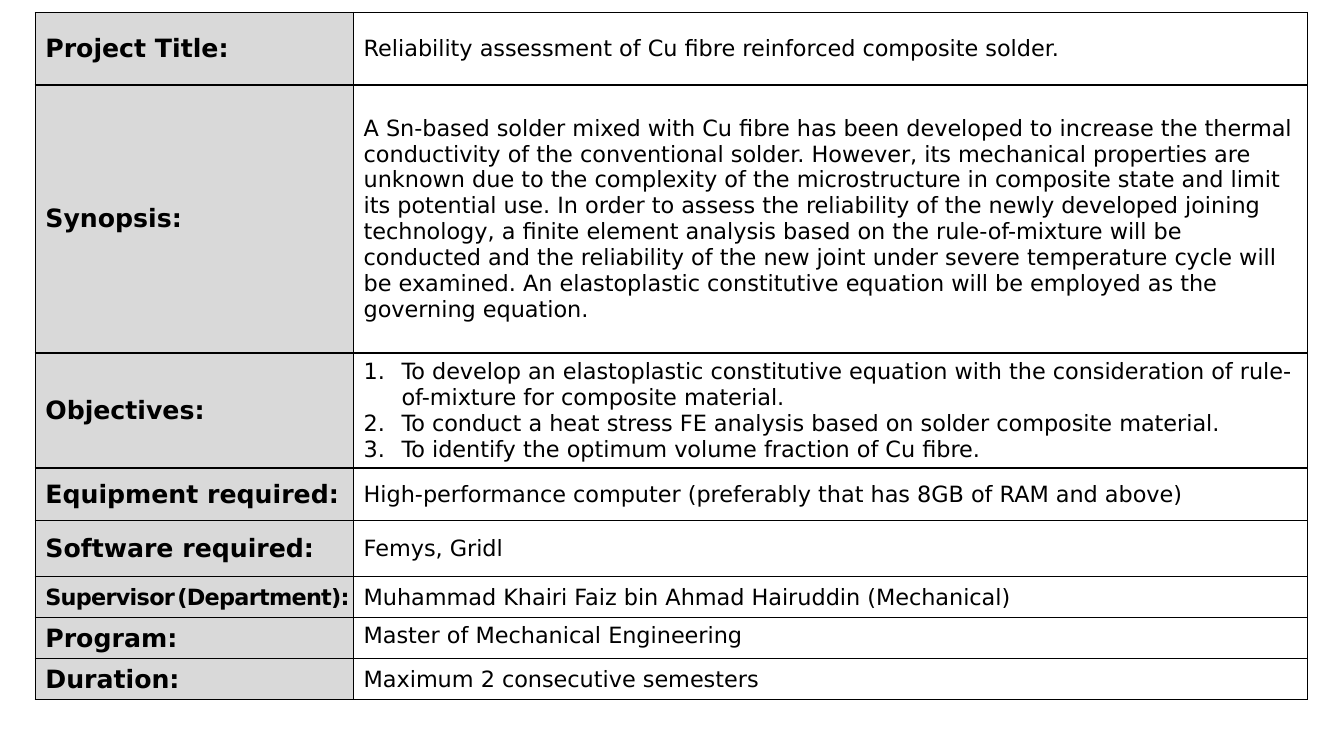
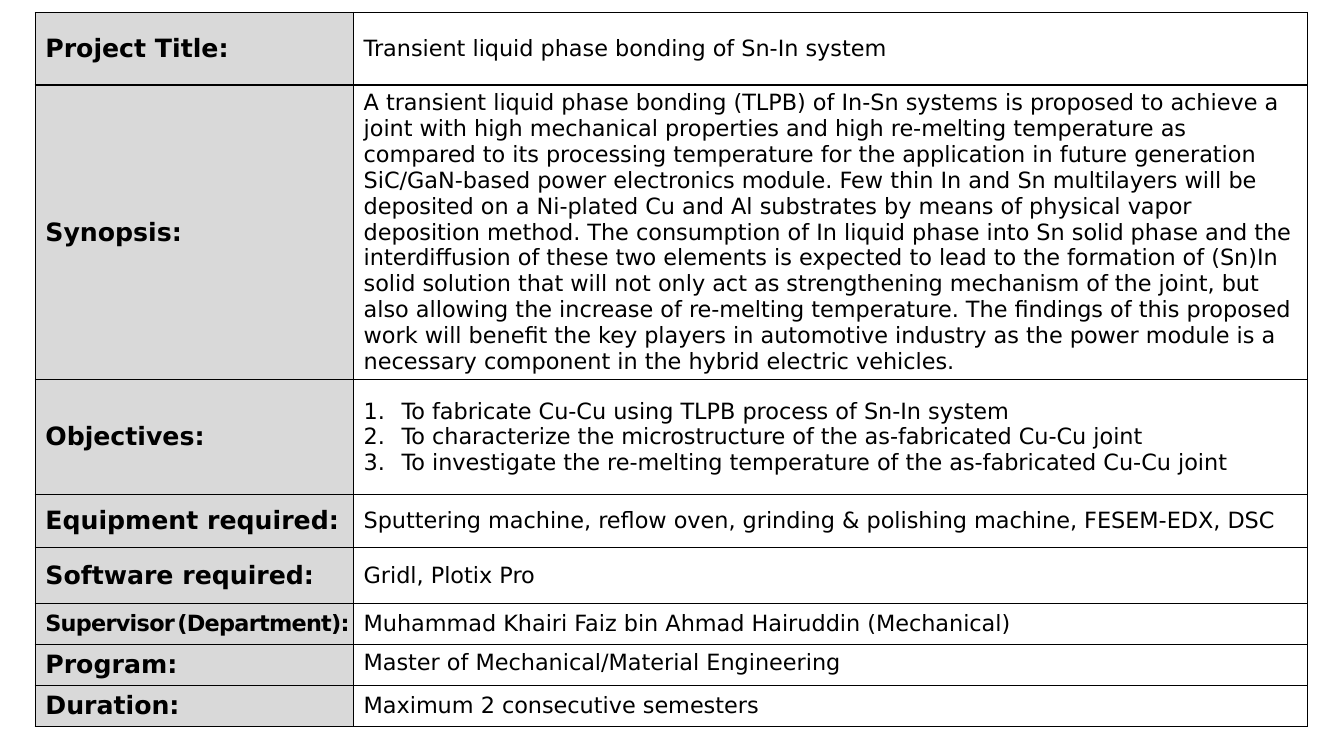
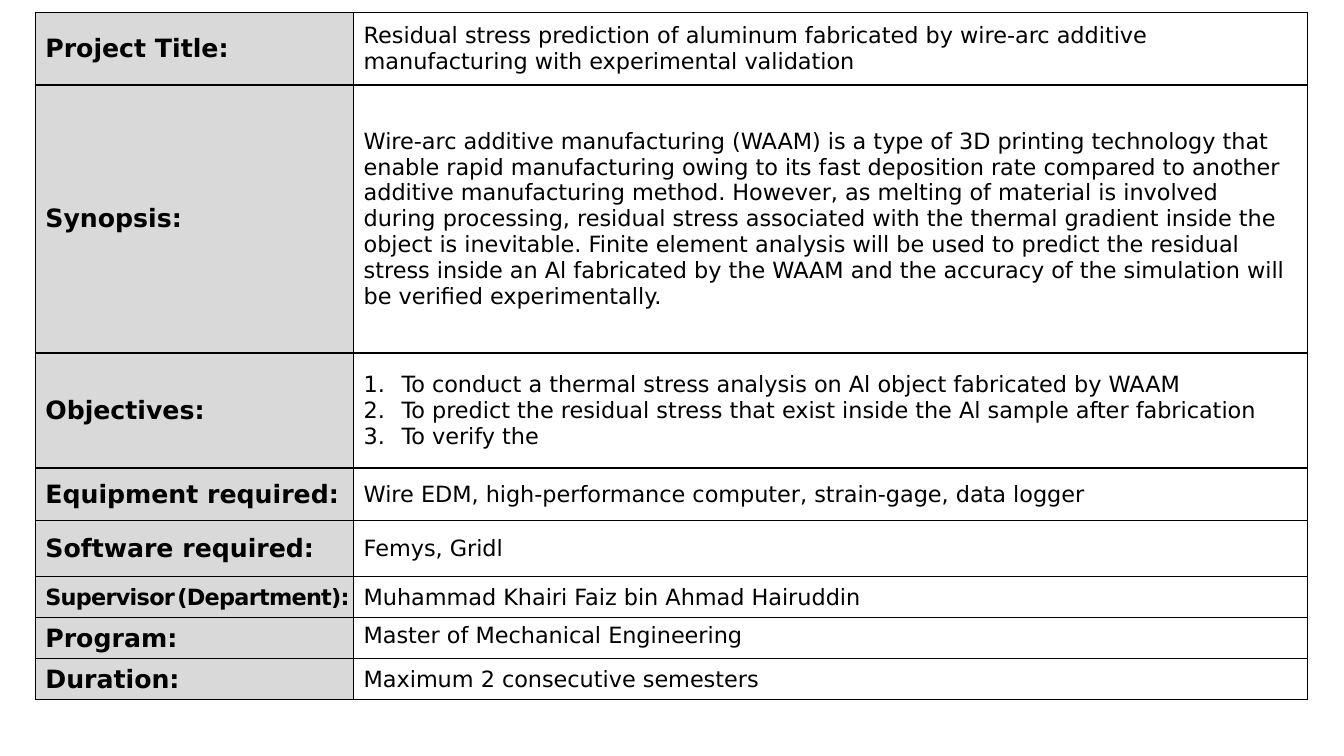
import lxml.etree
import pptx
import pptx.dml.color
import pptx.enum.text
import pptx.oxml.ns
import pptx.util

Pt = pptx.util.Pt
qn = pptx.oxml.ns.qn
RGB = pptx.dml.color.RGBColor.from_string
ANCHOR = pptx.enum.text.MSO_ANCHOR

THEME = {
    "font": "DejaVu Sans",
    "ink": "000000",
    "label_fill": "D9D9D9",
    "paper": "FFFFFF",
    "label_size": 18,
    "body_size": 16,
    "gap_size": 5,
    "rule": 1,
}

SLIDE_SIZE = (960, 540)
TABLE_ORIGIN = (25.2, 8.9)
COLUMN_WIDTHS = (227.4, 681.2)
LIST_INDENT = 27

FIELDS = [
    ("Project Title:", 51.8),
    ("Synopsis:", 191.5),
    ("Objectives:", 82.1),
    ("Equipment required:", 37.8),
    ("Software required:", 40),
    (("Supervisor", " ", "(Department):"), 29.3),
    ("Program:", 29.3),
    ("Duration:", 29.3),
]
TOP_ANCHORED = "Program:"

PROJECTS = [
    [
        "Reliability assessment of Cu fibre reinforced composite solder.",
        (
            "A Sn-based solder mixed with Cu fibre has been developed to increase the thermal "
            "conductivity of the conventional solder.",
            "However, its mechanical properties are unknown due to the complexity of the "
            "microstructure in composite state and limit its potential use.",
            "In order to assess the reliability of the newly developed joining technology, a "
            "finite element analysis based on the rule-of-mixture will be conducted and the "
            "reliability of the new joint under severe temperature cycle will be examined.",
            "An elastoplastic constitutive equation will be employed as the governing equation.",
        ),
        [
            "To develop an elastoplastic constitutive equation with the consideration of "
            "rule-of-mixture for composite material.",
            "To conduct a heat stress FE analysis based on solder composite material.",
            "To identify the optimum volume fraction of Cu fibre.",
        ],
        "High-performance computer (preferably that has 8GB of RAM and above)",
        "Femys, Gridl",
        "Muhammad Khairi Faiz bin Ahmad Hairuddin (Mechanical)",
        "Master of Mechanical Engineering",
        "Maximum 2 consecutive semesters",
    ],
    [
        "Transient liquid phase bonding of Sn-In system",
        (
            "A transient liquid phase bonding (TLPB) of In-Sn systems is proposed to achieve a "
            "joint with high mechanical properties and high re-melting temperature as "
            "compared to its processing temperature for the application in future generation "
            "SiC/GaN-based power electronics module.",
            "Few thin In and Sn multilayers will be deposited on a Ni-plated Cu and Al "
            "substrates by means of physical vapor deposition method.",
            "The consumption of In liquid phase into Sn solid phase and the interdiffusion of "
            "these two elements is expected to lead to the formation of (Sn)In solid solution "
            "that will not only act as strengthening mechanism of the joint, but also allowing "
            "the increase of re-melting temperature.",
            "The findings of this proposed work will benefit the key players in automotive "
            "industry as the power module is a necessary component in the hybrid electric "
            "vehicles.",
        ),
        [
            "To fabricate Cu-Cu using TLPB process of Sn-In system",
            "To characterize the microstructure of the as-fabricated Cu-Cu joint",
            "To investigate the re-melting temperature of the as-fabricated Cu-Cu joint",
        ],
        "Sputtering machine, reflow oven, grinding & polishing machine, FESEM-EDX, DSC",
        "Gridl, Plotix Pro",
        "Muhammad Khairi Faiz bin Ahmad Hairuddin (Mechanical)",
        "Master of Mechanical/Material Engineering",
        "Maximum 2 consecutive semesters",
    ],
    [
        "Residual stress prediction of aluminum fabricated by wire-arc additive "
        "manufacturing with experimental validation",
        (
            "Wire-arc additive manufacturing (WAAM) is a type of 3D printing technology that "
            "enable rapid manufacturing owing to its fast deposition rate compared to another "
            "additive manufacturing method.",
            "However, as melting of material is involved during processing, residual stress "
            "associated with the thermal gradient inside the object is inevitable.",
            "Finite element analysis will be used to predict the residual stress inside an Al "
            "fabricated by the WAAM and the accuracy of the simulation will be verified "
            "experimentally.",
        ),
        [
            "To conduct a thermal stress analysis on Al object fabricated by WAAM",
            "To predict the residual stress that exist inside the Al sample after fabrication",
            "To verify the",
        ],
        "Wire EDM, high-performance computer, strain-gage, data logger",
        "Femys, Gridl",
        "Muhammad Khairi Faiz bin Ahmad Hairuddin",
        "Master of Mechanical Engineering",
        "Maximum 2 consecutive semesters",
    ],
]


def style_run(run, size, bold):
    run.font.name = THEME["font"]
    run.font.size = Pt(size)
    run.font.bold = bold
    run.font.color.rgb = RGB(THEME["ink"])


def frame_cell(cell, fill):
    properties = cell._tc.get_or_add_tcPr()
    for side in ("a:lnL", "a:lnR", "a:lnT", "a:lnB"):
        border = lxml.etree.SubElement(properties, qn(side), w=str(Pt(THEME["rule"])))
        ink = lxml.etree.SubElement(border, qn("a:solidFill"))
        lxml.etree.SubElement(ink, qn("a:srgbClr"), val=THEME["ink"])
    cell.fill.solid()
    cell.fill.fore_color.rgb = RGB(fill)
    cell.vertical_anchor = ANCHOR.MIDDLE


def number_paragraph(paragraph):
    properties = paragraph._p.get_or_add_pPr()
    properties.set("marL", str(Pt(LIST_INDENT)))
    properties.set("indent", str(-Pt(LIST_INDENT)))
    lxml.etree.SubElement(properties, qn("a:buAutoNum"), type="arabicPeriod")


def write_label(cell, label):
    frame_cell(cell, THEME["label_fill"])
    if isinstance(label, str):
        cell.text_frame.text = label
        style_run(cell.text_frame.paragraphs[0].runs[0], THEME["label_size"], True)
        return
    cell.margin_right = 0
    for part in label:
        run = cell.text_frame.paragraphs[0].add_run()
        run.text = part
        style_run(run, THEME["body_size"] if part.strip() else THEME["gap_size"], True)
        run.font._element.set("spc", "-50")


def write_entry(cell, entry):
    frame_cell(cell, THEME["paper"])
    numbered = isinstance(entry, list)
    if isinstance(entry, str):
        cell.text_frame.text = entry
    else:
        cell.text_frame.text = ("\n" if numbered else " ").join(entry)
    for paragraph in cell.text_frame.paragraphs:
        if numbered:
            number_paragraph(paragraph)
        style_run(paragraph.runs[0], THEME["body_size"], False)


def add_project(deck, entries):
    slide = deck.slides.add_slide(deck.slide_layouts[6])
    total_height = sum(height for _, height in FIELDS)
    extent = (*TABLE_ORIGIN, sum(COLUMN_WIDTHS), total_height)
    project = slide.shapes.add_table(len(FIELDS), 2, *map(Pt, extent)).table
    project.first_row = project.horz_banding = False
    for column, width in zip(project.columns, COLUMN_WIDTHS):
        column.width = Pt(width)
    for index, ((label, height), entry) in enumerate(zip(FIELDS, entries)):
        project.rows[index].height = Pt(height)
        write_label(project.cell(index, 0), label)
        write_entry(project.cell(index, 1), entry)
        if label == TOP_ANCHORED:
            project.cell(index, 1).vertical_anchor = ANCHOR.TOP


def main():
    deck = pptx.Presentation()
    deck.slide_width, deck.slide_height = map(Pt, SLIDE_SIZE)
    for entries in PROJECTS:
        add_project(deck, entries)
    deck.save("out.pptx")


if __name__ == "__main__":
    main()
